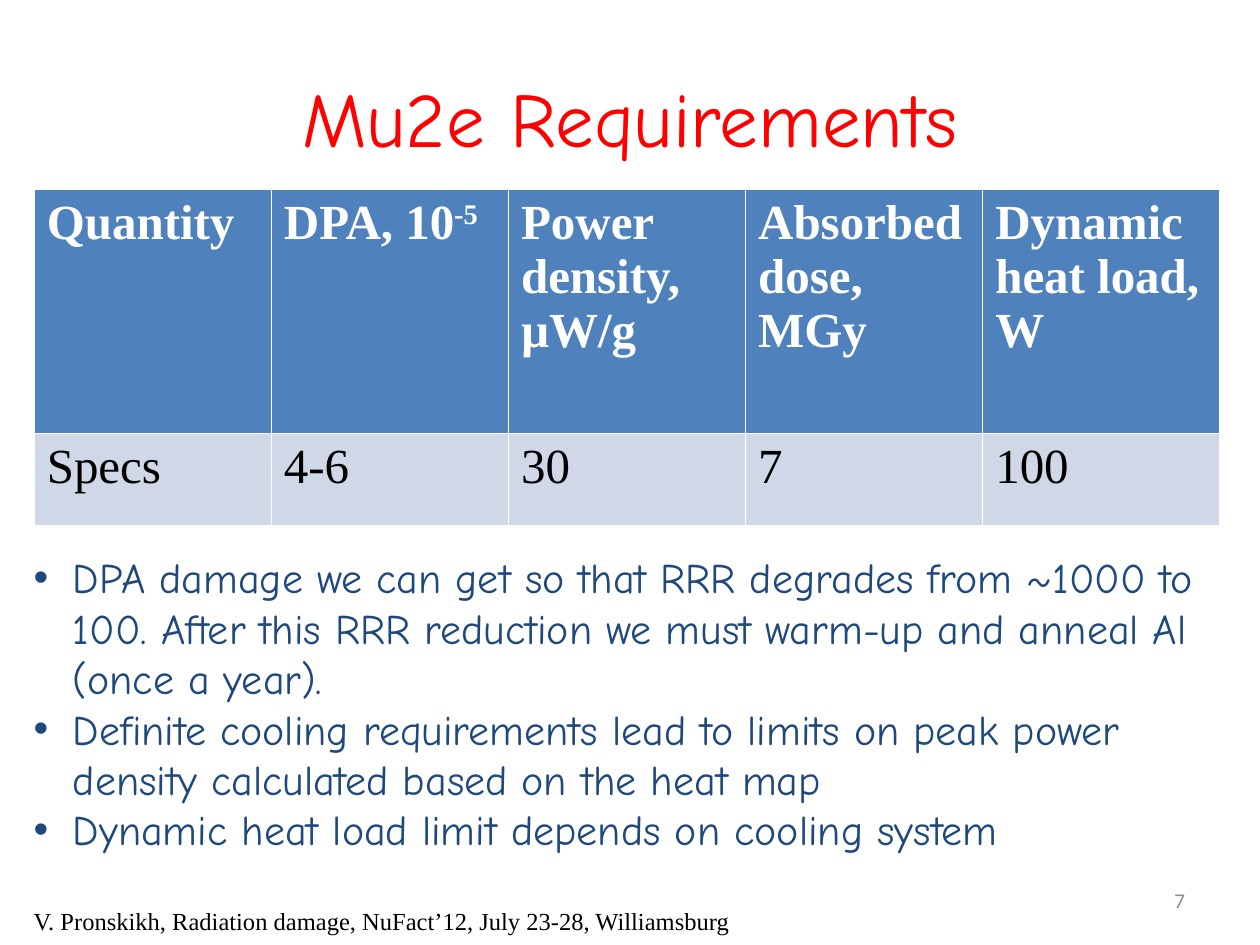
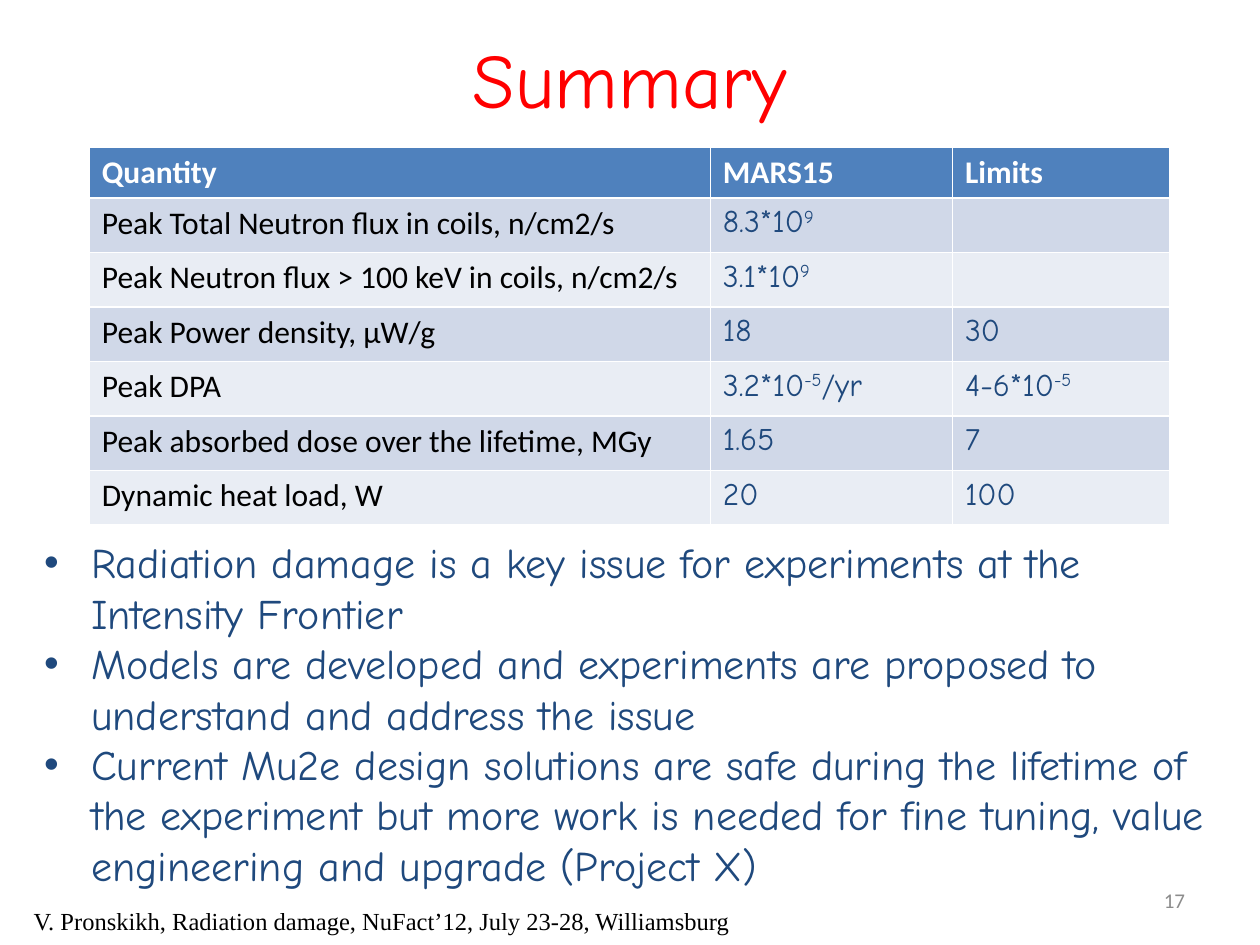
"""Build two slides on radiation limits and results for Mu2e."""
from lxml.etree import SubElement
from pptx import Presentation
from pptx.dml.color import RGBColor
from pptx.enum.text import MSO_ANCHOR as Anchor, MSO_AUTO_SIZE as Fit, PP_ALIGN as Align
from pptx.oxml.ns import qn
from pptx.util import Cm, Pt

rgb = RGBColor.from_string
RED, NAVY, BLUE, GREY = "FF0000", "1F497D", "4F81BD", "8C8C8C"
WHITE, BLACK = "FFFFFF", "000000"
BANDS = ["E9EDF4", "D0D8E8"]
COMIC, ROMAN, SANS = "Comic Neue", "Times New Roman", "Calibri"
FOOT = "V. Pronskikh, Radiation damage, NuFact’12, July 23-28, Williamsburg"


def write(para, text, font, size, hue, bold=False):
    """Set a paragraph's text, raising each part between carets."""
    first, *rest = text.split("^")
    para.text = first
    for part in rest:
        para.add_run().text = part
    for i, run in enumerate(para.runs):
        run.font.name, run.font.size, run.font.bold = font, Pt(size), bold
        run.font.color.rgb = rgb(hue)
        if i % 2:
            run.font._element.set("baseline", "30000")


def box(slide, spot, lines, font, size, hue, align=Align.LEFT, anchor=Anchor.TOP, wrap=True):
    """Add a text box with one paragraph a line and return its paragraphs."""
    frame = slide.shapes.add_textbox(*map(Cm, spot)).text_frame
    frame.word_wrap, frame.vertical_anchor = wrap, anchor
    frame.auto_size = Fit.SHAPE_TO_FIT_TEXT if anchor == Anchor.TOP else Fit.NONE
    frame.text = "\n".join(lines)
    for para, line in zip(frame.paragraphs, lines):
        write(para, line, font, size, hue)
        para.alignment = align
    return frame.paragraphs


pages = [
    dict(
        title="Mu2e Requirements", top=0.76, num="7",
        spot=(0.69, 3.81), cols=[4.78] * 5, rows=[4.93, 1.85],
        size=28, fonts=(ROMAN, ROMAN), hue=BLACK,
        cells=[
            ["Quantity", "DPA, 10^-5", "Power density, µW/g", "Absorbed dose, MGy",
             "Dynamic heat load, W"],
            ["Specs", "4-6", "30", "7", "100"],
        ],
        body=(0.43, 11, 24.56, 6.4), dent=0.79,
        points=[
            "DPA damage we can get so that RRR degrades from ~1000 to 100. "
            "After this RRR reduction we must warm-up and anneal Al (once a year).",
            "Definite cooling requirements lead to limits on peak power density "
            "calculated based on the heat map",
            "Dynamic heat load limit depends on cooling system",
        ],
    ),
    dict(
        title="Summary", top=-0.03, num="17",
        spot=(1.8, 2.97), cols=[12.52, 4.88, 4.39], rows=[0.9] + [1.1] * 6,
        size=18, fonts=(SANS, COMIC), hue=NAVY,
        cells=[
            ["Quantity", "MARS15", "Limits"],
            ["Peak Total Neutron flux in coils, n/cm2/s", "8.3*10^9", ""],
            ["Peak Neutron flux > 100 keV in coils, n/cm2/s", "3.1*10^9", ""],
            ["Peak Power density, µW/g", "18", "30"],
            ["Peak DPA", "3.2*10^-5^/yr", "4-6*10^-5"],
            ["Peak absorbed dose over the lifetime, MGy", "1.65", "7"],
            ["Dynamic heat load, W", "20", "100"],
        ],
        body=(0.64, 10.7, 24.13, 7.45), dent=0.95,
        points=[
            "Radiation damage is a key issue for experiments at the Intensity Frontier",
            "Models are developed and experiments are proposed to understand and "
            "address the issue",
            "Current Mu2e design solutions are safe during the lifetime of the experiment "
            "but more work is needed for fine tuning, value engineering and upgrade (Project X)",
        ],
    ),
]

deck = Presentation()
deck.slide_width, deck.slide_height = Cm(25.4), Cm(19.05)

for page in pages:
    slide = deck.slides.add_slide(deck.slide_layouts[6])
    box(slide, (1.27, page["top"], 22.86, 3.18), [page["title"]], COMIC, 44, RED,
        Align.CENTER, Anchor.MIDDLE)

    cols, rows = page["cols"], page["rows"]
    size = sum(cols), sum(rows)
    table = slide.shapes.add_table(
        len(rows), len(cols), *map(Cm, page["spot"] + size)).table
    for col, width in zip(table.columns, cols):
        col.width = Cm(width)
    for row, height in zip(table.rows, rows):
        row.height = Cm(height)
    for r, line in enumerate(page["cells"]):
        for c, text in enumerate(line):
            cell = table.cell(r, c)
            cell.fill.solid()
            cell.fill.fore_color.rgb = rgb(BANDS[r % 2] if r else BLUE)
            head, data = page["fonts"]
            font = data if r and c else head
            hue = WHITE if r == 0 else page["hue"] if c else BLACK
            write(cell.text_frame.paragraphs[0], text, font, page["size"], hue, r == 0)

    dent = Cm(page["dent"])
    for para in box(slide, page["body"], page["points"], COMIC, 24, NAVY):
        props = para._p.get_or_add_pPr()
        props.set("marL", str(dent))
        props.set("indent", str(-dent))
        SubElement(props, qn("a:buFont")).set("typeface", "Arial")
        SubElement(props, qn("a:buChar")).set("char", "•")

    box(slide, (0.43, 18.13, 14.65, 0.86), [FOOT], ROMAN, 14, BLACK, wrap=False)
    box(slide, (18.21, 17.65, 5.93, 1.01), [page["num"]], SANS, 12, GREY,
        Align.RIGHT, Anchor.MIDDLE)

deck.save("out.pptx")
